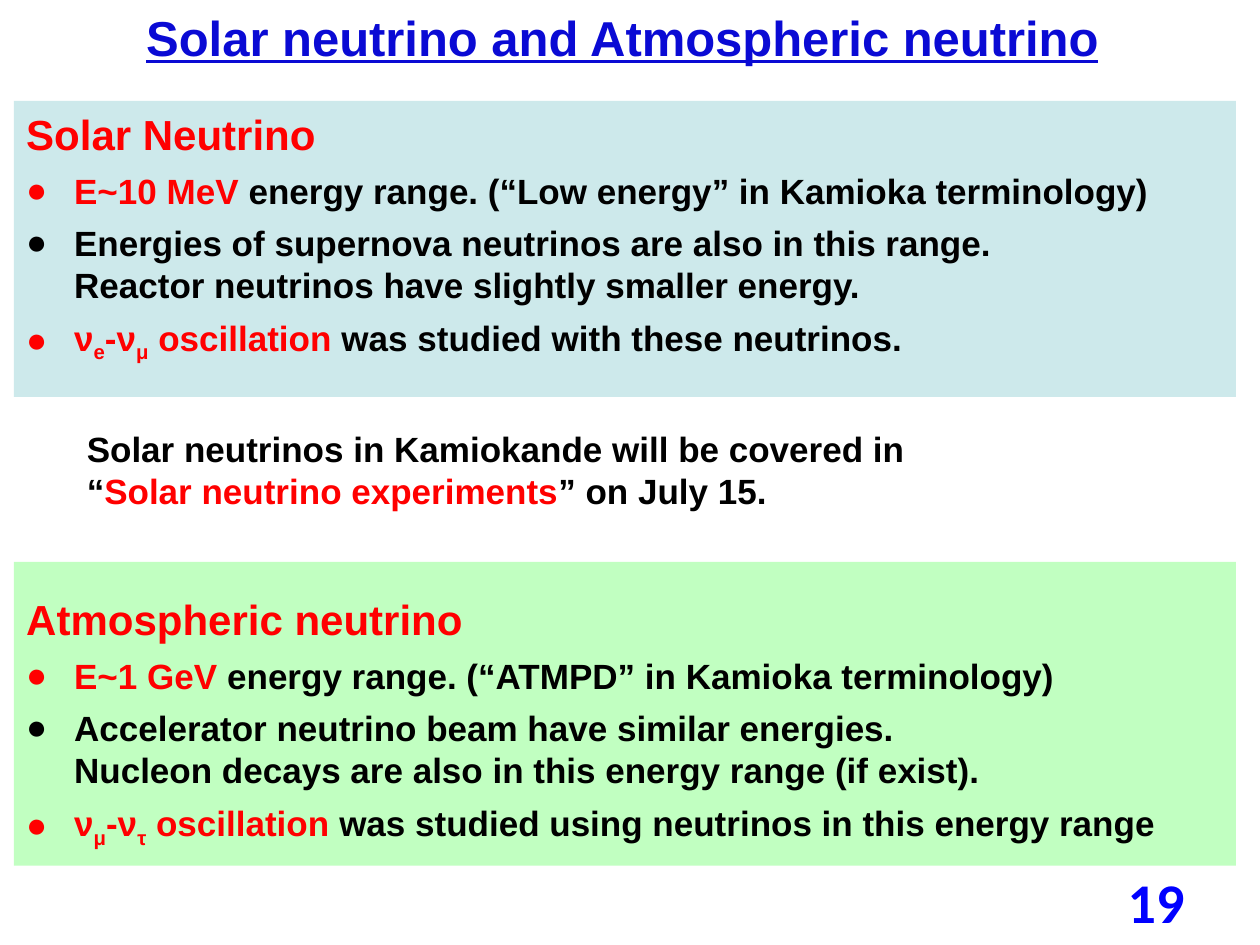
from dataclasses import dataclass

from lxml import etree
from pptx import Presentation
from pptx.dml.color import RGBColor
from pptx.enum.shapes import MSO_SHAPE
from pptx.enum.text import MSO_ANCHOR, PP_ALIGN
from pptx.oxml.ns import qn
from pptx.util import Inches, Pt

RECTANGLE = MSO_SHAPE.RECTANGLE
LEFT, CENTER, RIGHT = PP_ALIGN.LEFT, PP_ALIGN.CENTER, PP_ALIGN.RIGHT
TOP, MIDDLE = MSO_ANCHOR.TOP, MSO_ANCHOR.MIDDLE

COLORS = {
    "title": "0A0AD4",
    "number": "0000FF",
    "accent": "FF0000",
    "text": "000000",
    "solar": "CDE9EB",
    "atmospheric": "C1FFC1",
}
INDENT = Inches(0.38)
PANEL_LEFT = 0.11


@dataclass
class Span:
    text: str
    color: str = "text"
    subscript: bool = False


@dataclass
class Para:
    spans: list[Span]
    size: int = 20
    bullet: bool = False
    align: PP_ALIGN = LEFT
    after: int = 0
    font: str = "Arial"
    underline: bool = False


@dataclass
class Panel:
    fill: str
    top: float
    height: float
    text_top: float
    paras: list[Para]


def heading(text: str) -> Para:
    return Para([Span(text, "accent")], size=24, after=6)


def item(*spans: Span) -> Para:
    return Para(list(spans), bullet=True, after=6)


def oscillation(first: str, second: str, rest: str) -> Para:
    return item(
        Span("ν", "accent"), Span(first, "accent", True),
        Span("-ν", "accent"), Span(second, "accent", True),
        Span(" oscillation ", "accent"), Span(rest),
    )


def add_bullet(para) -> None:
    properties = para._p.get_or_add_pPr()
    properties.set("marL", str(INDENT))
    properties.set("indent", str(-INDENT))
    etree.SubElement(properties, qn("a:buFont")).set("typeface", "Arial")
    etree.SubElement(properties, qn("a:buChar")).set("char", "●")


def add_span(para, span: Span, style: Para) -> None:
    for index, line in enumerate(span.text.split("\n")):
        if index:
            para.add_line_break()
        run = para.add_run()
        run.text = line
        font = run.font
        font.name, font.size, font.bold = style.font, Pt(style.size), True
        font.color.rgb = RGBColor.from_string(COLORS[span.color])
        if style.underline:
            font.underline = True
        if span.subscript:
            run._r.get_or_add_rPr().set("baseline", "-25000")


def add_text(page, left: float, top: float, width: float, height: float,
             paras: list[Para], anchor: MSO_ANCHOR = TOP) -> None:
    box = page.shapes.add_textbox(Inches(left), Inches(top), Inches(width), Inches(height))
    frame = box.text_frame
    frame.word_wrap = True
    frame.vertical_anchor = anchor
    for index, style in enumerate(paras):
        para = frame.add_paragraph() if index else frame.paragraphs[0]
        para.alignment = style.align
        para.space_before, para.space_after = Pt(0), Pt(style.after)
        if style.bullet:
            add_bullet(para)
        for span in style.spans:
            add_span(para, span, style)


def add_panel(page, panel: Panel) -> None:
    shape = page.shapes.add_shape(RECTANGLE, Inches(PANEL_LEFT), Inches(panel.top),
                                  Inches(9.7), Inches(panel.height))
    shape.shadow.inherit = False
    shape.fill.solid()
    shape.fill.fore_color.rgb = RGBColor.from_string(COLORS[panel.fill])
    shape.line.fill.background()
    add_text(page, PANEL_LEFT, panel.text_top, 9.81, 2.2, panel.paras)


PANELS = [
    Panel("solar", 0.8, 2.35, 0.81, [
        heading("Solar Neutrino"),
        item(Span("E~10 MeV ", "accent"),
             Span("energy range. (“Low energy” in Kamioka terminology)")),
        item(Span("Energies of supernova neutrinos are also in this range.\n"
                  "Reactor neutrinos have slightly smaller energy.")),
        oscillation("e", "μ", "was studied with these neutrinos."),
    ]),
    Panel("atmospheric", 4.46, 2.41, 4.66, [
        heading("Atmospheric neutrino"),
        item(Span("E~1 GeV ", "accent"),
             Span("energy range. (“ATMPD” in Kamioka terminology)")),
        item(Span("Accelerator neutrino beam have similar energies.\n"
                  "Nucleon decays are also in this energy range (if exist).")),
        oscillation("μ", "τ", "was studied using neutrinos in this energy range"),
    ]),
]


def main() -> None:
    deck = Presentation()
    deck.slide_width, deck.slide_height = Inches(10), Inches(7.5)
    page = deck.slides.add_slide(deck.slide_layouts[6])

    # Title
    add_text(page, 0.57, 0.01, 8.74, 0.57, [
        Para([Span("Solar neutrino and Atmospheric neutrino", "title")],
             size=28, align=CENTER, underline=True)])

    # Coloured panels with their bullet lists
    for panel in PANELS:
        add_panel(page, panel)

    # Remark between the panels
    add_text(page, 0.59, 3.34, 7.78, 0.77, [
        Para([Span("Solar neutrinos in Kamiokande will be covered in\n“"),
              Span("Solar neutrino experiments", "accent"),
              Span("” on July 15.")])])

    # Page number
    add_text(page, 7.17, 6.95, 2.33, 0.4, [
        Para([Span("19", "number")], size=32, align=RIGHT, font="Calibri")], MIDDLE)

    deck.save("out.pptx")


if __name__ == "__main__":
    main()
